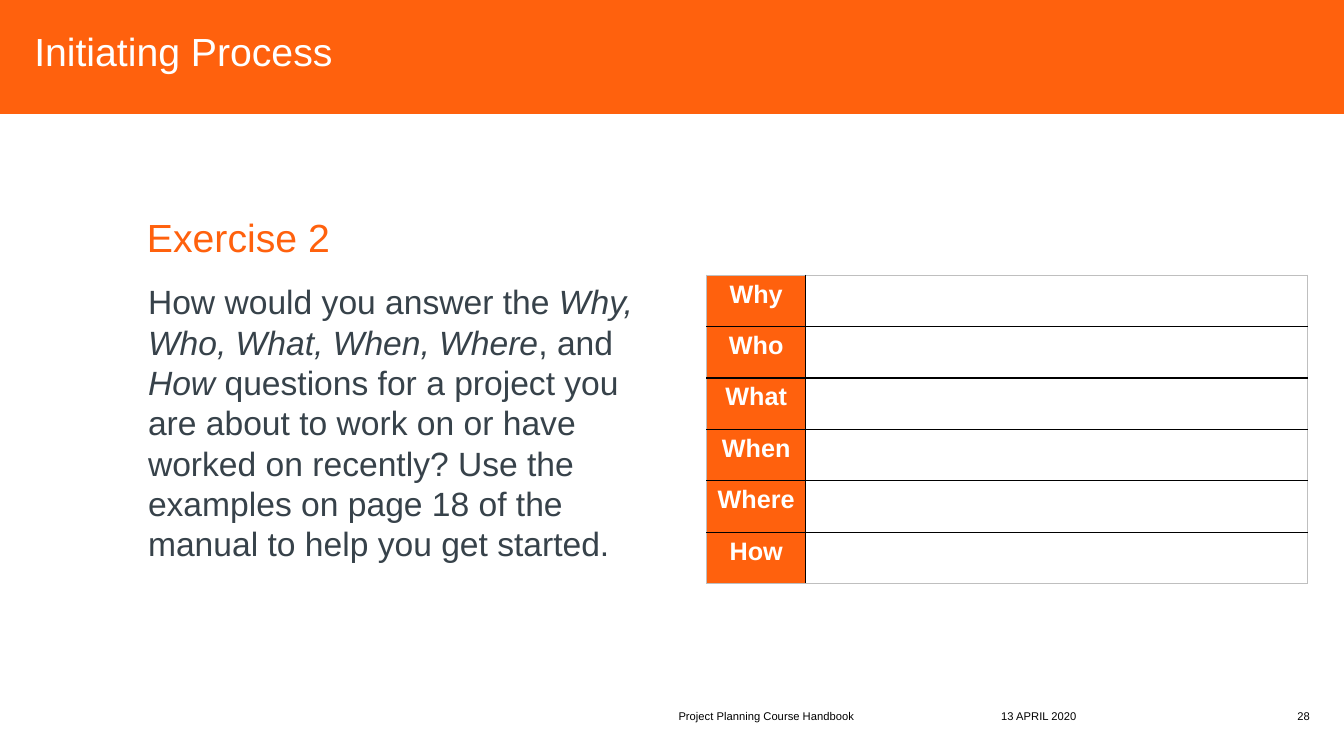
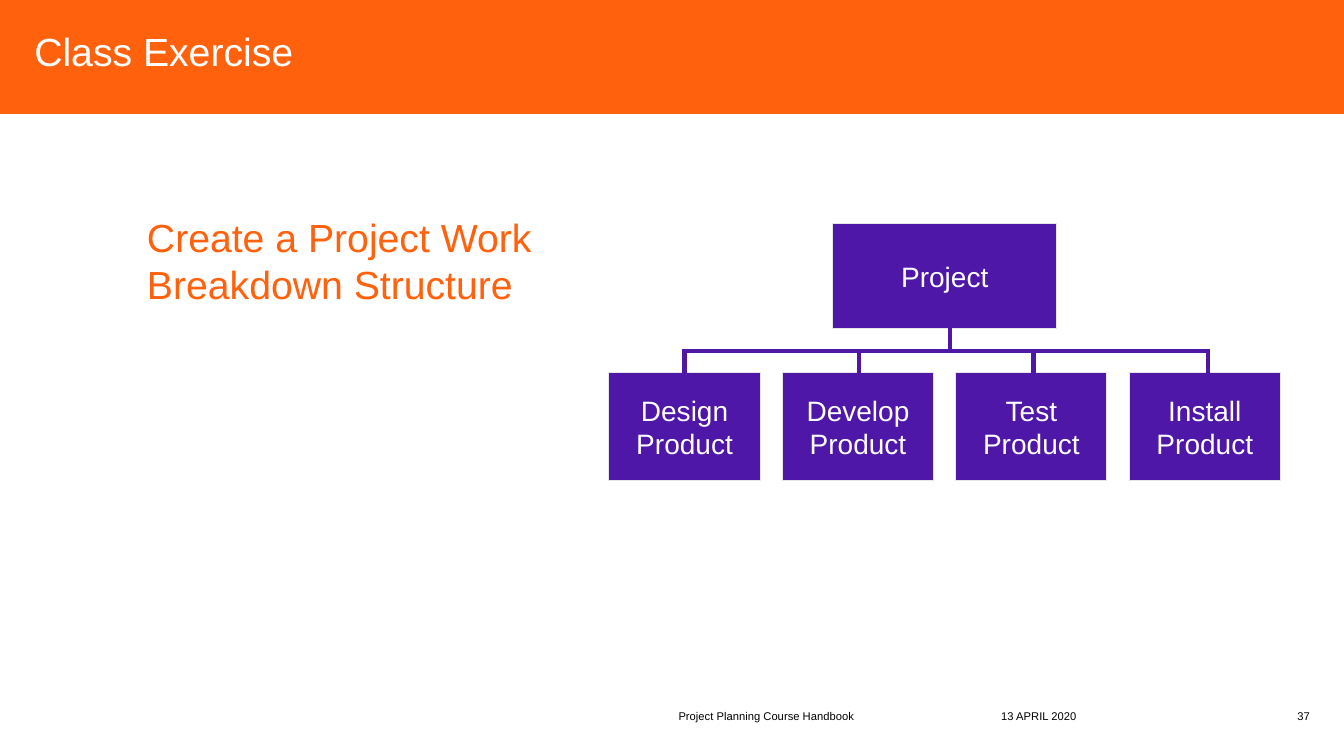
from dataclasses import dataclass

from lxml.etree import SubElement
from pptx import Presentation
from pptx.dml.color import RGBColor
from pptx.enum.shapes import MSO_CONNECTOR as Connector, MSO_SHAPE as Shape
from pptx.enum.text import MSO_ANCHOR as Anchor, PP_ALIGN as Align
from pptx.oxml.ns import qn
from pptx.util import Inches, Pt


@dataclass(frozen=True)
class Theme:
    font: str = "Arial"
    orange: str = "FF610D"
    purple: str = "4F17A8"
    slate: str = "37424A"
    white: str = "FFFFFF"
    black: str = "000000"
    box_edge: str = "E7E6E6"
    table_edge: str = "BFBFBF"
    heading_size: int = 28
    body_size: int = 24
    box_size: int = 20
    table_size: int = 18
    footer_size: int = 8


THEME = Theme()
WIDTH, HEIGHT = 13.33, 7.5
COURSE = "Project Planning Course Handbook"
DATE = "13 APRIL 2020"


def rgb(color):
    return RGBColor.from_string(color)


class Deck:
    def __init__(self, theme):
        self.theme = theme
        self.presentation = Presentation()
        self.presentation.slide_width = Inches(WIDTH)
        self.presentation.slide_height = Inches(HEIGHT)
        self.slide = None

    def style(self, paragraph, size, color, bold=False, align=Align.LEFT):
        paragraph.alignment = align
        font = paragraph.font
        font.name, font.size, font.bold = self.theme.font, Pt(size), bold
        font.color.rgb = rgb(color)

    def start_slide(self, title, number):
        """Add a slide with the title band and the footer."""
        theme = self.theme
        blank = self.presentation.slide_layouts[6]
        self.slide = self.presentation.slides.add_slide(blank)
        self.box(0, 0, WIDTH, 1.13, theme.orange)
        paragraph = self.text(0.34, 0.33, 12.64, 0.41, [title], theme.heading_size,
                              theme.white, margin=0, anchor=Anchor.MIDDLE)
        paragraph.line_spacing = 0.9
        self.footer(9.93, 1.99, DATE)
        self.footer(6.73, 3.06, COURSE)
        self.footer(12.54, 0.45, str(number), Align.RIGHT)

    def footer(self, left, width, text, align=Align.LEFT):
        self.text(left, 6.95, width, 0.22, [text], self.theme.footer_size,
                  self.theme.black, align, margin=0, anchor=Anchor.BOTTOM)

    def text(self, left, top, width, height, parts, size, color,
             align=Align.LEFT, margin=None, anchor=Anchor.TOP):
        """Add a one-paragraph text box with one run per part."""
        shape = self.slide.shapes.add_textbox(
            Inches(left), Inches(top), Inches(width), Inches(height))
        frame = shape.text_frame
        frame.word_wrap = True
        frame.vertical_anchor = anchor
        if margin is not None:
            frame.margin_left = frame.margin_right = Inches(margin)
            frame.margin_top = frame.margin_bottom = Inches(margin)
        paragraph = frame.paragraphs[0]
        self.style(paragraph, size, color, align=align)
        for part in parts:
            paragraph.add_run().text = part
        return paragraph

    def heading(self, width, height, text):
        self.text(1.36, 2.07, width, height, [text],
                  self.theme.heading_size, self.theme.orange)

    def box(self, left, top, width, height, fill, edge=None, label=None):
        shape = self.slide.shapes.add_shape(
            Shape.RECTANGLE, Inches(left), Inches(top), Inches(width), Inches(height))
        shape.shadow.inherit = False
        shape.fill.solid()
        shape.fill.fore_color.rgb = rgb(fill)
        if edge:
            shape.line.color.rgb = rgb(edge)
            shape.line.width = Pt(0.75)
        else:
            shape.line.fill.background()
        if label:
            frame = shape.text_frame
            frame.word_wrap = True
            frame.vertical_anchor = Anchor.MIDDLE
            frame.text = label
            self.style(frame.paragraphs[0], self.theme.box_size,
                       self.theme.white, align=Align.CENTER)

    def task(self, left, top, width, height, label):
        self.box(left, top, width, height, self.theme.purple, self.theme.box_edge, label)

    def line(self, x1, y1, x2, y2):
        connector = self.slide.shapes.add_connector(
            Connector.STRAIGHT, Inches(x1), Inches(y1), Inches(x2), Inches(y2))
        connector.line.color.rgb = rgb(self.theme.purple)
        connector.line.width = Pt(3)
        SubElement(connector._element.spPr, qn("a:effectLst"))

    def cell_borders(self, cell, outer_sides):
        """Draw grey borders on the outer sides and black ones elsewhere."""
        properties = cell._tc.get_or_add_tcPr()
        for side in "LRTB":
            outer = side in outer_sides
            border = SubElement(properties, qn(f"a:ln{side}"), w=str(Pt(0.75 if outer else 1)))
            fill = SubElement(border, qn("a:solidFill"))
            color = self.theme.table_edge if outer else self.theme.black
            SubElement(fill, qn("a:srgbClr"), val=color)

    def answer_table(self, left, top, column_widths, row_height, labels):
        """Add a table of row labels with an empty answer column."""
        theme = self.theme
        table = self.slide.shapes.add_table(
            len(labels), 2, Inches(left), Inches(top),
            Inches(sum(column_widths)), Inches(row_height * len(labels))).table
        table.first_row = table.horz_banding = False
        for column, width in zip(table.columns, column_widths):
            column.width = Inches(width)
        for index, label in enumerate(labels):
            table.rows[index].height = Inches(row_height)
            ends = ("T" if index == 0 else "") + ("B" if index == len(labels) - 1 else "")
            columns = (("L", theme.orange, label), ("R", theme.white, ""))
            for cell, (side, fill, text) in zip(table.rows[index].cells, columns):
                self.cell_borders(cell, side + ends)
                cell.fill.solid()
                cell.fill.fore_color.rgb = rgb(fill)
                cell.text = text
                self.style(cell.text_frame.paragraphs[0], theme.table_size,
                           theme.white, bold=True, align=Align.CENTER)


def initiating_slide(deck):
    deck.start_slide("Initiating Process", 28)
    question = deck.text(1.37, 2.74, 5.36, 2.93, [
        "How would you answer the ",
        "Why, Who, What, When, Where",
        ", and ",
        "How",
        " questions for a project you are about to work on or have worked on recently? "
        "Use the examples on page 18 of the manual to help you get started.",
    ], THEME.body_size, THEME.slate)
    for run in question.runs[1::2]:
        run.font.italic = True
    deck.heading(7.67, 0.57, "Exercise 2")
    deck.answer_table(7.01, 2.73, (0.98, 4.98), 0.51,
                      ("Why", "Who", "What", "When", "Where", "How"))


def breakdown_slide(deck):
    deck.start_slide("Class Exercise", 37)
    deck.heading(4.87, 1.04, "Create a Project Work Breakdown Structure")
    deck.task(8.26, 2.22, 2.22, 1.04, "Project")
    tasks = ("Design Product", "Develop Product", "Test Product", "Install Product")
    for index, label in enumerate(tasks):
        deck.task(6.04 + 1.72 * index, 3.7, 1.5, 1.07, label)
    branches = [6.79 + 1.73 * index for index in range(len(tasks))]
    for x in branches:
        deck.line(x, 3.46, x, 3.87)
    deck.line(9.42, 3.06, 9.42, 3.47)
    deck.line(branches[0] - 0.01, 3.48, branches[-1] + 0.01, 3.48)


def main():
    deck = Deck(THEME)
    initiating_slide(deck)
    breakdown_slide(deck)
    deck.presentation.save("out.pptx")


if __name__ == "__main__":
    main()
